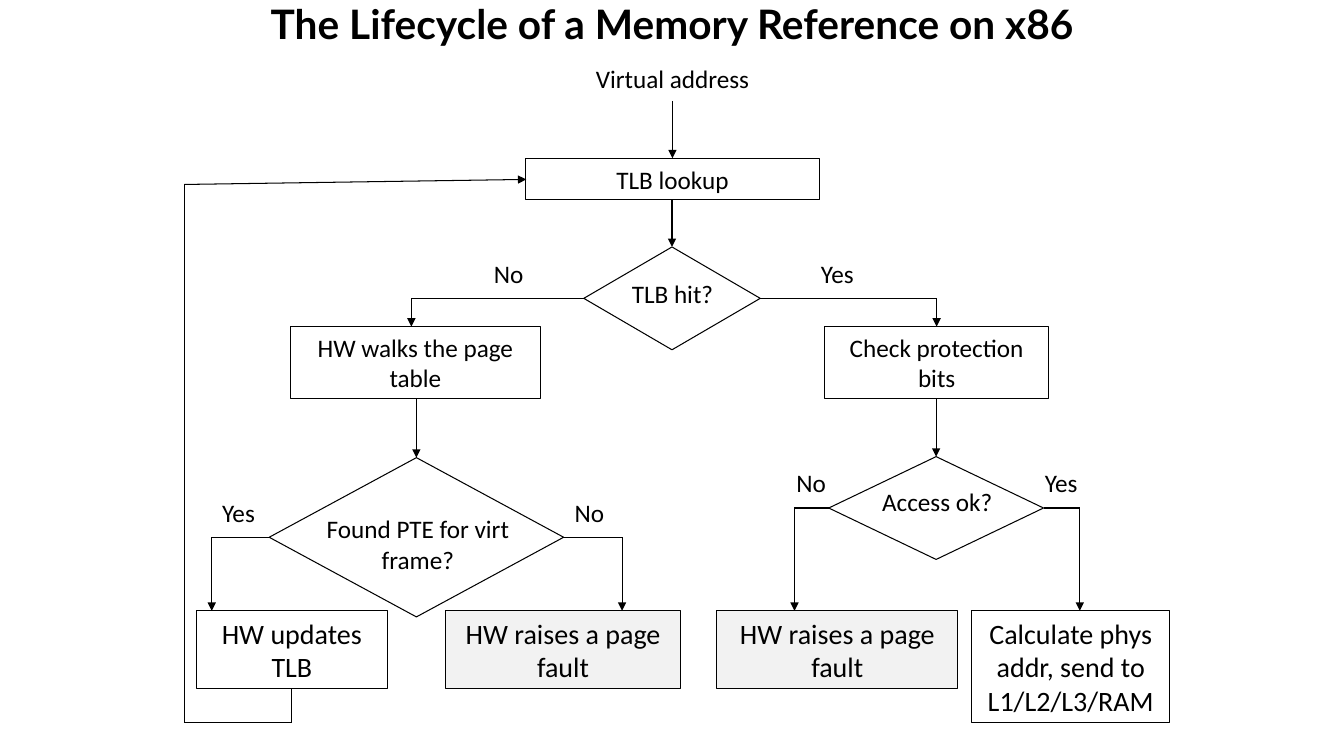
from itertools import pairwise

from lxml.etree import SubElement
from pptx import Presentation
from pptx.dml.color import RGBColor
from pptx.enum.shapes import MSO_CONNECTOR, MSO_SHAPE
from pptx.enum.text import MSO_ANCHOR, MSO_AUTO_SIZE, PP_ALIGN
from pptx.oxml.ns import qn
from pptx.util import Emu, Pt

SCALE = 9144
INK = "000000"
GREY = "F2F2F2"


def px(*nums):
    """Turn px lengths into EMU."""
    return [Emu(round(n * SCALE)) for n in nums]


def tint(code):
    """Turn a hex string into a colour."""
    return RGBColor.from_string(code)


def write(shape, text, size, face="Calibri", bold=False):
    """Put one centred paragraph into a shape."""
    frame = shape.text_frame
    frame.word_wrap = True
    frame.auto_size = MSO_AUTO_SIZE.NONE
    frame.vertical_anchor = MSO_ANCHOR.MIDDLE
    frame.margin_left, frame.margin_right = px(10, 10)
    frame.margin_top, frame.margin_bottom = px(5, 5)
    para = frame.paragraphs[0]
    para.text = text
    para.alignment = PP_ALIGN.CENTER
    font = para.font
    font.name, font.size, font.bold = face, Pt(size), bold
    font.color.rgb = tint(INK)


def label(slide, box, text):
    """Place plain text in a box."""
    write(slide.shapes.add_textbox(*px(*box)), text, 18)


def frame(slide, kind, box, fill=None):
    """Draw a thin outlined shape."""
    shape = slide.shapes.add_shape(kind, *px(*box))
    shape.shadow.inherit = False
    shape.line.color.rgb = tint(INK)
    shape.line.width = Pt(0.75)
    if fill:
        shape.fill.solid()
        shape.fill.fore_color.rgb = tint(fill)
    else:
        shape.fill.background()
    return shape


def step(slide, box, text, size=18, fill=None):
    """Draw a boxed step with its text."""
    write(frame(slide, MSO_SHAPE.RECTANGLE, box, fill), text, size)


def wire(slide, *points):
    """Join points by lines, with an arrowhead at the last."""
    for start, end in pairwise(points):
        line = slide.shapes.add_connector(
            MSO_CONNECTOR.STRAIGHT, *px(*start, *end))
        line.line.color.rgb = tint(INK)
        line.line.width = Pt(0.75)
        if end == points[-1]:
            SubElement(line.line._get_or_add_ln(), qn("a:tailEnd"), type="triangle")
        SubElement(line._element.spPr, qn("a:effectLst"))


def choice(slide, box, text, inner, rise, arms):
    """Draw a decision with its entry arrow and its left and right arms."""
    left, top, width, height = box
    shift, drop, wide, high = inner
    label(slide, (left + shift, top + drop, wide, high), text)
    frame(slide, MSO_SHAPE.FLOWCHART_DECISION, box)
    peak, mid = left + width / 2, top + height / 2
    wire(slide, (peak, top - rise), (peak, top))
    for side, edge, arm in zip((-1, 1), (left, left + width), arms):
        word, gap, reach, fall = arm
        turn = edge + side * reach
        wire(slide, (edge, mid), (turn, mid), (turn, mid + fall))
        label(slide, (edge + side * gap - 39, mid - 45, 79, 40), word)


def entry(slide, box):
    """Draw the address, its arrow and the lookup step."""
    left, top, width, height = box
    mid = left + width / 2
    label(slide, (left, top, width, 40), "Virtual address")
    wire(slide, (mid, top + 42), (mid, top + height - 41))
    step(slide, (left, top + height - 41, width, 41), "TLB lookup")


def hit(slide, box):
    """Draw the TLB test."""
    choice(slide, box, "TLB hit?", (7, 26, 162, 40), 47,
           [("No", 75, 171, 28), ("Yes", 76, 175, 28)])


def walk(slide, box):
    """Draw the page table walk and its outcomes."""
    left, top = box
    step(slide, (left + 93, top, 248, 71), "HW walks the page table")
    choice(slide, (left + 72, top + 130, 292, 158),
           "Found PTE for virt frame?", (36, 50, 223, 71), 59,
           [("Yes", 31, 57, 73), ("No", 25, 58, 73)])
    step(slide, (left, top + 282, 189, 77), "HW updates TLB", 20)
    step(slide, (left + 247, top + 282, 233, 77),
         "HW raises a page fault", 20, GREY)


def check(slide, box):
    """Draw the protection check and its outcomes."""
    left, top = box
    step(slide, (left + 107, top, 222, 71), "Check protection bits")
    choice(slide, (left + 111, top + 129, 213, 102),
           "Access ok?", (20, 24, 175, 40), 58,
           [("No", 18, 34, 102), ("Yes", 17, 36, 102)])
    step(slide, (left, top + 282, 239, 77), "HW raises a page fault", 20, GREY)
    step(slide, (left + 253, top + 282, 196, 111),
         "Calculate phys addr, send to L1/L2/L3/RAM", 20)


def loop(slide, box):
    """Draw the way back to the lookup."""
    left, top, width, height = box
    base = top + height
    wire(slide, (left + 106, base - 34), (left + 106, base), (left, base),
         (left, top + 5), (left + width, top))


def head(slide, box):
    """Place the slide title."""
    title = slide.shapes.title
    title.left, title.top, title.width, title.height = px(*box)
    write(title, "The Lifecycle of a Memory Reference on x86", 29, "Lato", True)


def main():
    """Build the slide."""
    deck = Presentation()
    deck.slide_width, deck.slide_height = px(1333, 750)
    slide = deck.slides.add_slide(deck.slide_layouts[5])
    head(slide, (140, -6, 1054, 59))
    entry(slide, (521, 58, 292, 140))
    hit(slide, (579, 245, 175, 102))
    walk(slide, (195, 324))
    check(slide, (711, 324))
    loop(slide, (183, 178, 339, 539))
    deck.save("out.pptx")


if __name__ == "__main__":
    main()
